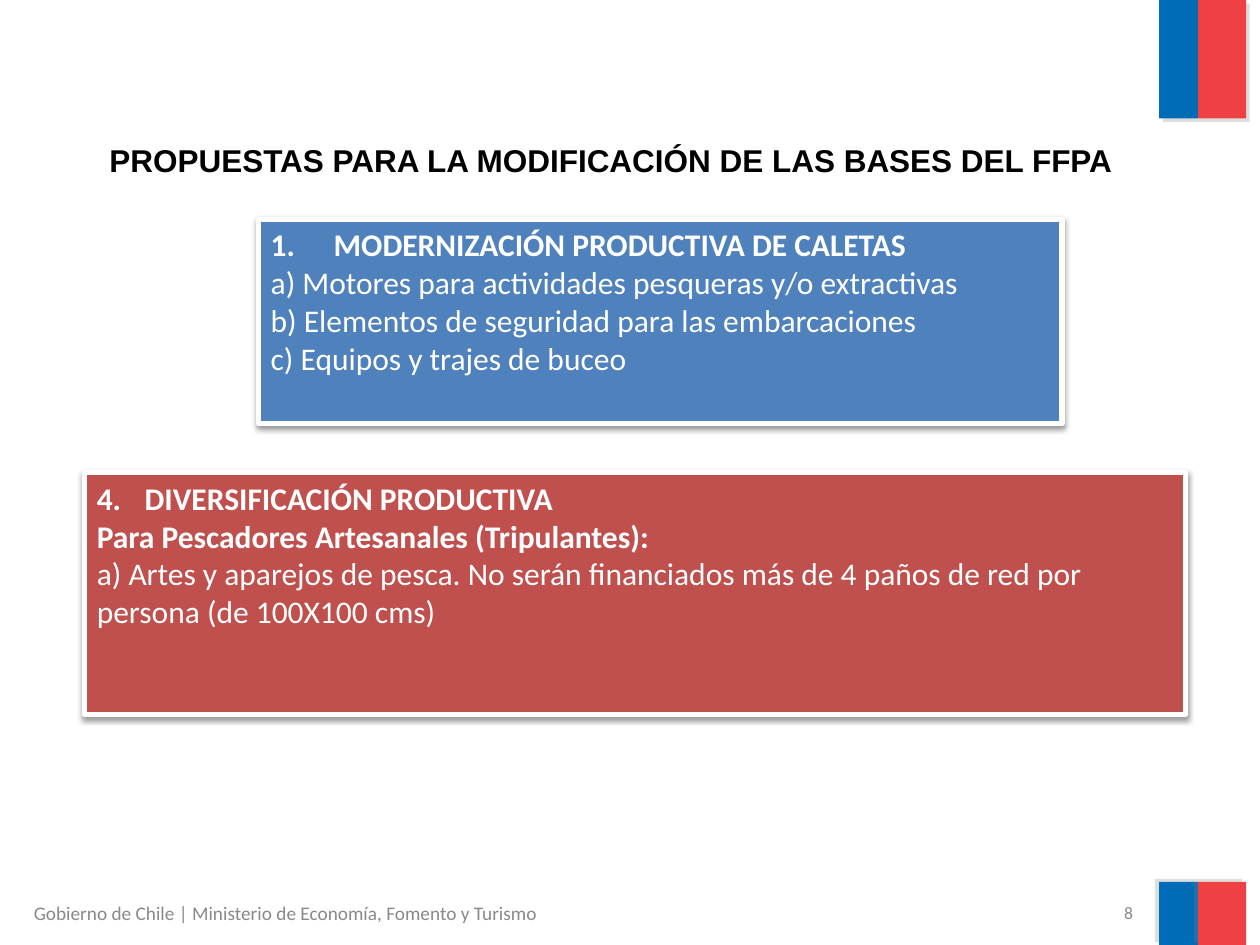
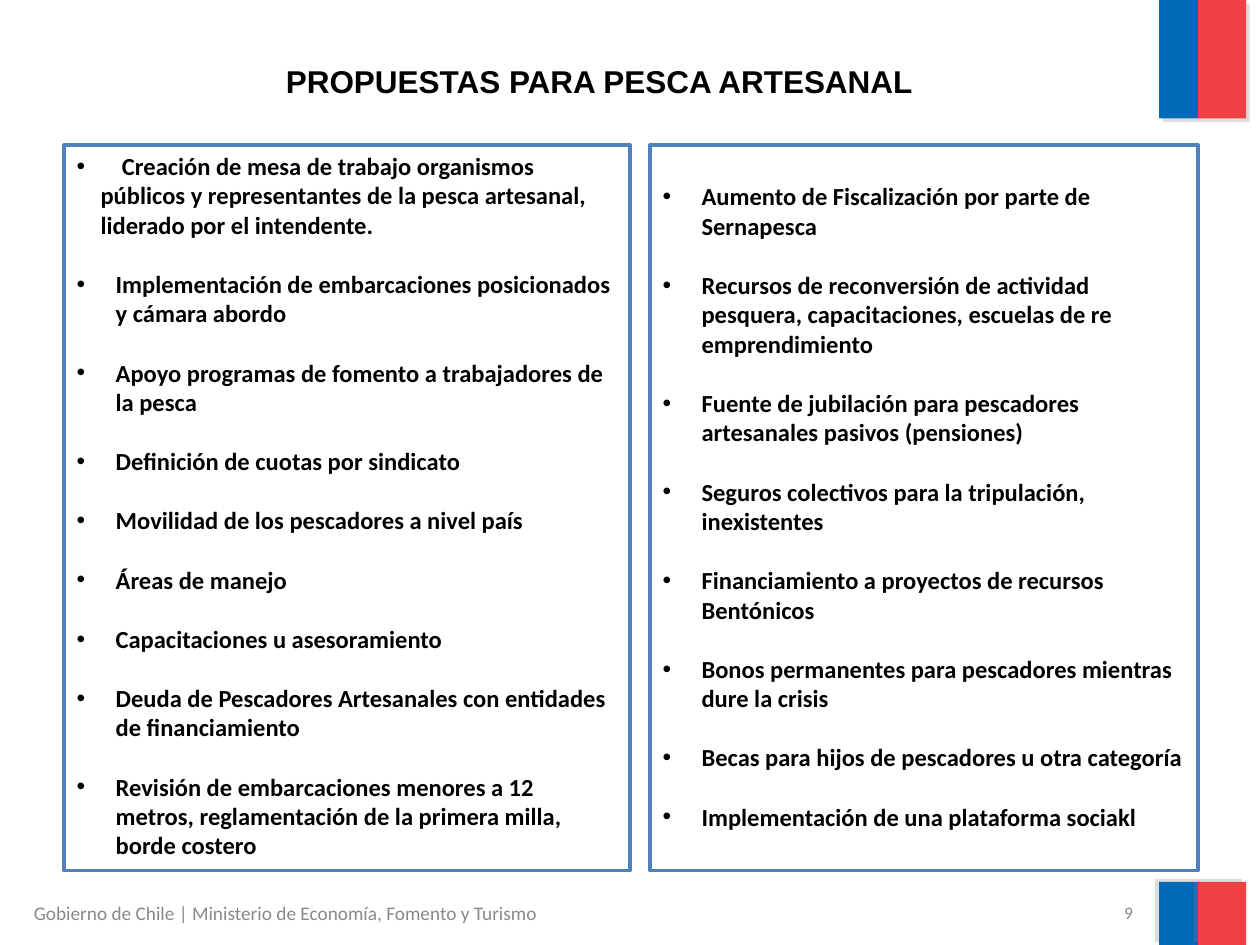
from collections import namedtuple
from dataclasses import dataclass

from lxml import etree
from pptx import Presentation
from pptx.dml.color import RGBColor
from pptx.enum.shapes import MSO_SHAPE
from pptx.enum.text import MSO_ANCHOR, PP_ALIGN
from pptx.oxml.ns import qn
from pptx.util import Inches, Pt

RECT = MSO_SHAPE.RECTANGLE
TOP, MIDDLE = MSO_ANCHOR.TOP, MSO_ANCHOR.MIDDLE
LEFT, RIGHT = PP_ALIGN.LEFT, PP_ALIGN.RIGHT

SLIDE_W, SLIDE_H = Inches(10), Inches(7.5)
COLS, ROWS = 100, 75
COL, ROW = SLIDE_W / COLS, SLIDE_H / ROWS

Box = namedtuple("Box", "x y w h")  # in grid columns and rows
Shadow = namedtuple("Shadow", "color alpha blur dist angle")


@dataclass(frozen=True)
class Theme:
    band_blue: str = "006CB7"
    band_red: str = "EF4144"
    blue: str = "4F81BD"
    red: str = "C0504D"
    white: str = "FFFFFF"
    black: str = "000000"
    grey: str = "898989"
    title_font: str = "Arial"
    body_font: str = "Calibri"
    title_size: int = 18
    card_size: int = 18
    list_size: int = 14
    footer_size: int = 11
    number_size: int = 10
    list_gap: int = 17
    card_line: int = 3
    panel_line: int = 2
    card_shadow: Shadow = Shadow("000000", 38, 3.1, 1.6, 90)
    top_shadow: Shadow = Shadow("808080", 25, 0, 3, 45)
    bottom_shadow: Shadow = Shadow("808080", 25, 0, 3, 215)


T = Theme()
FOOTER = "Gobierno de Chile | Ministerio de Economía, Fomento y Turismo"


def place(box):
    return (round(box.x * COL), round(box.y * ROW),
            round(box.w * COL), round(box.h * ROW))


def add_xml(parent, tag, **attrs):
    child = etree.SubElement(parent, qn(tag))
    for name, value in attrs.items():
        child.set(name, str(value))
    return child


def add_shadow(sp, shadow):
    effects = sp._element.spPr.find(qn("a:effectLst"))
    outer = add_xml(effects, "a:outerShdw", blurRad=Pt(shadow.blur), dist=Pt(shadow.dist),
                    dir=shadow.angle * 60000, algn="tl", rotWithShape=0)
    color = add_xml(outer, "a:srgbClr", val=shadow.color)
    add_xml(color, "a:alpha", val=shadow.alpha * 1000)


def add_rect(s, box, fill, line=None, width=0, shadow=None):
    sp = s.shapes.add_shape(RECT, *place(box))
    sp.shadow.inherit = False
    sp.fill.solid()
    sp.fill.fore_color.rgb = RGBColor.from_string(fill)
    if line:
        sp.line.color.rgb = RGBColor.from_string(line)
        sp.line.width = Pt(width)
    else:
        sp.line.fill.background()
    if shadow:
        add_shadow(sp, shadow)
    return sp


def write(tf, lines, size, color, font=T.body_font, bold=False, align=LEFT, anchor=TOP):
    """Fill a text frame with one paragraph per line, all in one style."""
    tf.word_wrap = True
    tf.vertical_anchor = anchor
    tf.text = "\n".join(lines)
    for p in tf.paragraphs:
        p.alignment = align
        for r in p.runs:
            r.font.name, r.font.size, r.font.bold = font, Pt(size), bold
            r.font.color.rgb = RGBColor.from_string(color)
    return tf.paragraphs


def add_text(s, box, text, *style, **options):
    tf = s.shapes.add_textbox(*place(box)).text_frame
    return write(tf, [text], *style, **options)[0]


def set_indent(p, left, first):
    pPr = p._p.get_or_add_pPr()
    pPr.set("marL", str(Inches(left)))
    pPr.set("indent", str(Inches(first)))
    return pPr


def add_bands(s, y, h, shadow):
    add_rect(s, Box(92, y, 3.1, h), T.band_blue, shadow=shadow)
    add_rect(s, Box(95.1, y, 3.8, h), T.band_red, shadow=shadow)


def add_frame(s, number):
    """Draw the flag bands, footer and slide number."""
    add_bands(s, 0, 9.4, T.top_shadow)
    add_bands(s, 70, 5, T.bottom_shadow)
    add_text(s, Box(1.7, 71.4, 47.6, 2.1), FOOTER, T.footer_size, T.grey, anchor=MIDDLE)
    add_text(s, Box(85.4, 71.4, 5.5, 2.1), str(number), T.number_size, T.grey,
             align=RIGHT, anchor=MIDDLE)


def add_title(s, box, text):
    return add_text(s, box, text, T.title_size, T.black, font=T.title_font, bold=True)


def add_card(s, box, fill, number, hang, headings, items):
    """Draw a filled card whose first heading carries a list number."""
    sp = add_rect(s, box, fill, T.white, T.card_line, T.card_shadow)
    paragraphs = write(sp.text_frame, headings + items, T.card_size, T.white)
    for p in paragraphs[:len(headings)]:
        p.runs[0].font.bold = True
    pPr = set_indent(paragraphs[0], hang, -hang)
    add_xml(pPr, "a:buFont", typeface="+mj-lt")
    add_xml(pPr, "a:buAutoNum", type="arabicPeriod", startAt=number)


def add_panel(s, box, items, top_inset=0.05, first_hang=0.31, first_tab=None):
    """Draw an outlined panel with a bulleted list."""
    sp = add_rect(s, box, T.white, T.blue, T.panel_line)
    sp.text_frame.margin_top = Inches(top_inset)
    paragraphs = write(sp.text_frame, items, T.list_size, T.black, bold=True)
    for i, p in enumerate(paragraphs):
        if i < len(items) - 1:
            p.space_after = Pt(T.list_gap)
        hang = 0.31 if i else first_hang
        pPr = set_indent(p, hang, -hang)
        add_xml(pPr, "a:buFont", typeface="Arial")
        add_xml(pPr, "a:buChar", char="•")
        if first_tab and i == 0:
            tabs = add_xml(pPr, "a:tabLst")
            add_xml(tabs, "a:tab", pos=Inches(first_tab), algn="l")


def new_slide(prs, number):
    s = prs.slides.add_slide(prs.slide_layouts[6])
    add_frame(s, number)
    return s


def build_fund_rules(prs):
    s = new_slide(prs, 8)
    add_card(s, Box(20.5, 17.4, 63.8, 16.2), T.blue, 1, 0.5,
             ["MODERNIZACIÓN PRODUCTIVA DE CALETAS"],
             ["a) Motores para actividades pesqueras y/o extractivas",
              "b) Elementos de seguridad para las embarcaciones",
              "c) Equipos y trajes de buceo"])
    title = add_title(s, Box(2.8, 10.7, 94.5, 4),
                      "PROPUESTAS PARA LA MODIFICACIÓN DE LAS BASES DEL FFPA")
    set_indent(title, 0.49, 0)
    add_card(s, Box(6.7, 37.5, 87.4, 19.2), T.red, 4, 0.38,
             ["DIVERSIFICACIÓN PRODUCTIVA", "Para Pescadores Artesanales (Tripulantes):"],
             ["a) Artes y aparejos de pesca. No serán financiados más de 4 paños de red "
              "por persona (de 100X100 cms)"])


def build_proposals(prs):
    s = new_slide(prs, 9)
    add_panel(s, Box(5.1, 11.5, 44.9, 57.6), [
        "\tCreación de mesa de trabajo organismos públicos y representantes de la "
        "pesca artesanal, liderado por el intendente.",
        "Implementación de embarcaciones posicionados y cámara abordo",
        "Apoyo programas de fomento a trabajadores de la pesca",
        "Definición de cuotas por sindicato",
        "Movilidad de los pescadores a nivel país",
        "Áreas de manejo",
        "Capacitaciones u asesoramiento",
        "Deuda de Pescadores Artesanales con entidades de financiamiento",
        "Revisión de embarcaciones menores a 12 metros, reglamentación de la primera "
        "milla, borde costero",
    ], first_hang=0.19, first_tab=0.36)
    add_panel(s, Box(51.6, 11.5, 43.5, 57.6), [
        "Aumento de Fiscalización por parte de Sernapesca",
        "Recursos de reconversión de actividad pesquera, capacitaciones, escuelas de "
        "re emprendimiento",
        "Fuente de jubilación para pescadores artesanales pasivos (pensiones)",
        "Seguros colectivos para la tripulación, inexistentes",
        "Financiamiento a proyectos de recursos Bentónicos",
        "Bonos permanentes para pescadores mientras dure la crisis",
        "Becas para hijos de pescadores u otra categoría",
        "Implementación de una plataforma sociakl",
    ], top_inset=0.29)
    add_title(s, Box(21.7, 4.4, 56.6, 7.1), "PROPUESTAS PARA PESCA ARTESANAL")


def main():
    prs = Presentation()
    prs.slide_width, prs.slide_height = SLIDE_W, SLIDE_H
    build_fund_rules(prs)
    build_proposals(prs)
    prs.save("out.pptx")


if __name__ == "__main__":
    main()
